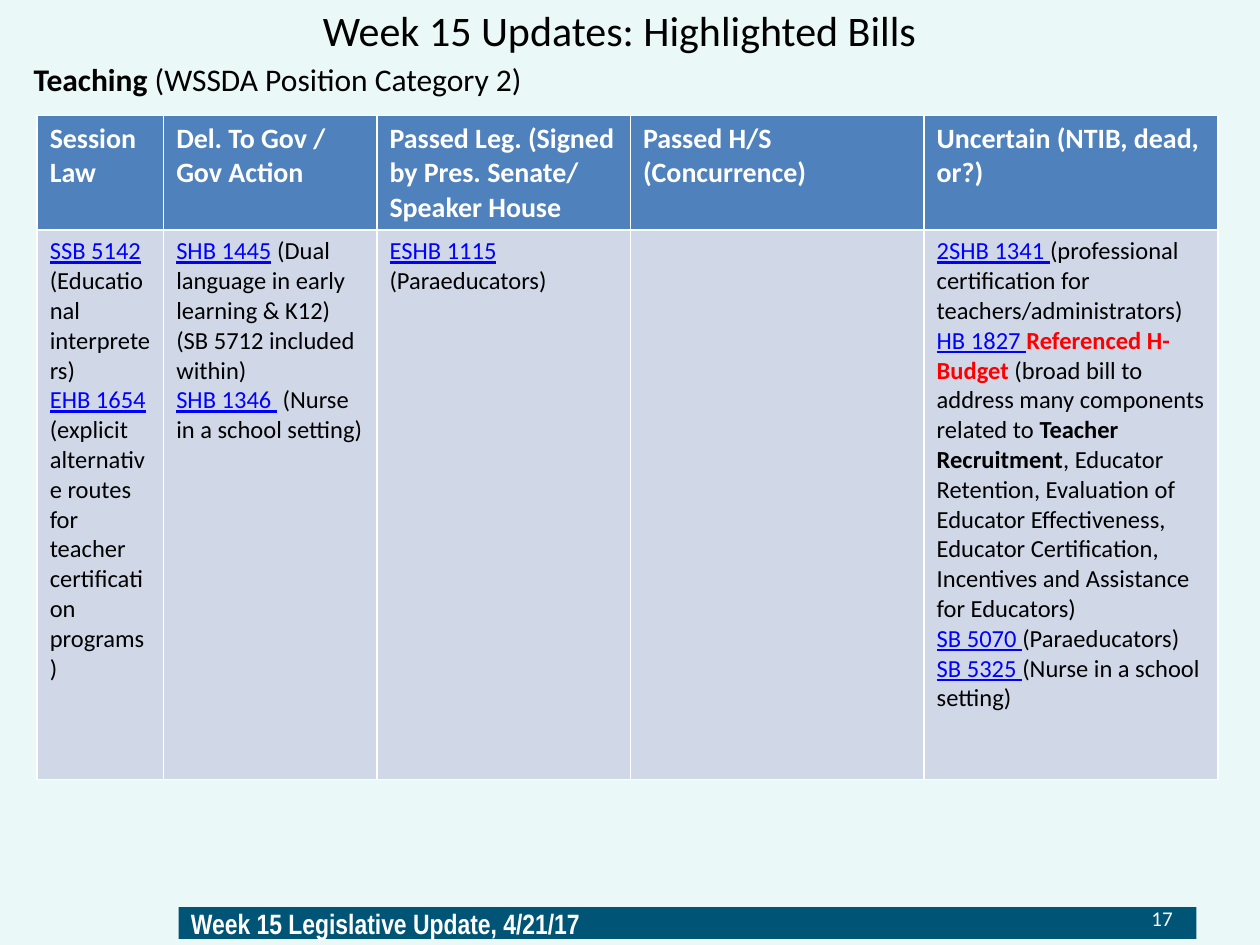
from pptx import Presentation
from pptx.dml.color import RGBColor
from pptx.enum import shapes, text
from pptx.util import Cm, Pt

WHITE = RGBColor(0xFF, 0xFF, 0xFF)
BLACK = RGBColor(0, 0, 0)
RED = RGBColor(0xFF, 0, 0)
LINK = RGBColor(0, 0, 0xFF)
PALE = RGBColor(0xEA, 0xF8, 0xF8)
TEAL = RGBColor(0x00, 0x54, 0x76)
HEAD = RGBColor(0x4F, 0x81, 0xBD)
BODY = RGBColor(0xD0, 0xD8, 0xE8)

PLAIN = {"bold": False}
BOLD = {"bold": True}
BILL = {"color": LINK, "underline": True}
ALERT = {"color": RED, "bold": True}

COLS = [2.55, 4.3, 5.11, 5.92, 5.92]
ROWS = [2.31, 11.07]
HEADS = ["Session Law", "Del. To Gov / Gov Action",
         "Passed Leg. (Signed by Pres. Senate/ Speaker House",
         "Passed H/S (Concurrence)", "Uncertain (NTIB, dead, or?)"]
# One list per column; each entry is a bill number and the runs after it
BILLS = [
    [("SSB 5142 ", [("(Educational interpreters)", PLAIN)]),
     ("EHB 1654 ", [("(explicit alternative routes for teacher "
                     "certification programs)", PLAIN)])],
    [("SHB 1445", [(" (Dual language in early learning & K12) "
                    "(SB 5712 included within)", PLAIN)]),
     ("SHB 1346 ", [(" (Nurse in a school setting)", PLAIN)])],
    [("ESHB 1115 ", [("(Paraeducators)", PLAIN)])],
    [],
    [("2SHB 1341 ", [("(professional certification for "
                      "teachers/administrators)", PLAIN)]),
     ("HB 1827 ", [("Referenced H-Budget ", ALERT),
                   ("(broad bill to address many components related to ",
                    PLAIN),
                   ("Teacher Recruitment", BOLD),
                   (", Educator Retention, Evaluation of Educator "
                    "Effectiveness, Educator Certification, Incentives and "
                    "Assistance for Educators)", PLAIN)]),
     ("SB 5070 ", [("(Paraeducators)", PLAIN)]),
     ("SB 5325 ", [("(Nurse in a school setting)", PLAIN)])],
]


def put(shape, box):
    for name, value in zip(("left", "top", "width", "height"), box):
        setattr(shape, name, Cm(value))


def write(para, runs, size, color=BLACK, name="Calibri"):
    """Add (words, style) runs to a paragraph."""
    for words, style in runs:
        run = para.add_run()
        run.text = words
        look = {"size": Pt(size), "name": name, **style}
        run.font.color.rgb = look.pop("color", color)
        for key, value in look.items():
            setattr(run.font, key, value)


def label(slide, box, runs, size, color=BLACK, align=text.PP_ALIGN.LEFT,
          anchor=text.MSO_ANCHOR.TOP):
    frame = slide.shapes.add_textbox(*map(Cm, box)).text_frame
    frame.word_wrap = True
    frame.vertical_anchor = anchor
    para = frame.paragraphs[0]
    para.alignment = align
    write(para, runs, size, color)
    return para


def header(slide, box):
    left, top, width, height = box
    title = slide.shapes.title
    put(title, box)
    title.text_frame.vertical_anchor = text.MSO_ANCHOR.MIDDLE
    para = title.text_frame.paragraphs[0]
    para.alignment = text.PP_ALIGN.CENTER
    write(para, [("Week 15 Updates: Highlighted Bills ", PLAIN)], 24)
    para = label(slide, (left + 0.23, top + 1.58, width - 0.2, 1.2),
                 [("Teaching", BOLD), (" (WSSDA Position Category 2)", PLAIN)],
                 18)
    para.space_before = Pt(3.6)


def bills(slide, left, top):
    grid = slide.shapes.add_table(
        len(ROWS), len(COLS), Cm(left), Cm(top), Cm(sum(COLS)),
        Cm(sum(ROWS))).table
    for row, height in zip(grid.rows, ROWS):
        row.height = Cm(height)
    for i, (width, head, items) in enumerate(zip(COLS, HEADS, BILLS)):
        grid.columns[i].width = Cm(width)
        top_cell, cell = grid.cell(0, i), grid.cell(1, i)
        for part, fill in ((top_cell, HEAD), (cell, BODY)):
            part.fill.solid()
            part.fill.fore_color.rgb = fill
        write(top_cell.text_frame.paragraphs[0], [(head, BOLD)], 16, WHITE)
        frame = cell.text_frame
        for n, (bill, runs) in enumerate(items):
            para = frame.add_paragraph() if n else frame.paragraphs[0]
            write(para, [(bill, BILL)] + runs, 14)


def footer(slide, box):
    left, top, width, height = box
    bar = slide.shapes.add_shape(shapes.MSO_SHAPE.RECTANGLE, *map(Cm, box))
    bar.shadow.inherit = False
    bar.fill.solid()
    bar.fill.fore_color.rgb = TEAL
    bar.line.fill.background()
    bar.text_frame.vertical_anchor = text.MSO_ANCHOR.MIDDLE
    para = bar.text_frame.paragraphs[0]
    para.alignment = text.PP_ALIGN.LEFT
    write(para, [("Week 15 Legislative Update, 4/21/17", BOLD)], 16, WHITE,
          "Arial Narrow")
    label(slide, (left + width - 6.15, top - 0.3, 5.92, 1.02),
          [("17", PLAIN)], 12, WHITE, text.PP_ALIGN.RIGHT,
          text.MSO_ANCHOR.MIDDLE)


def main():
    deck = Presentation()
    deck.slide_width, deck.slide_height = Cm(25.4), Cm(19.05)
    slide = deck.slides.add_slide(deck.slide_layouts[5])
    slide.background.fill.solid()
    slide.background.fill.fore_color.rgb = PALE
    footer(slide, (3.6, 18.29, 20.52, 0.64))
    header(slide, (0.2, -0.5, 24.77, 2.2))
    bills(slide, 0.75, 2.33)
    deck.save("out.pptx")


if __name__ == "__main__":
    main()
